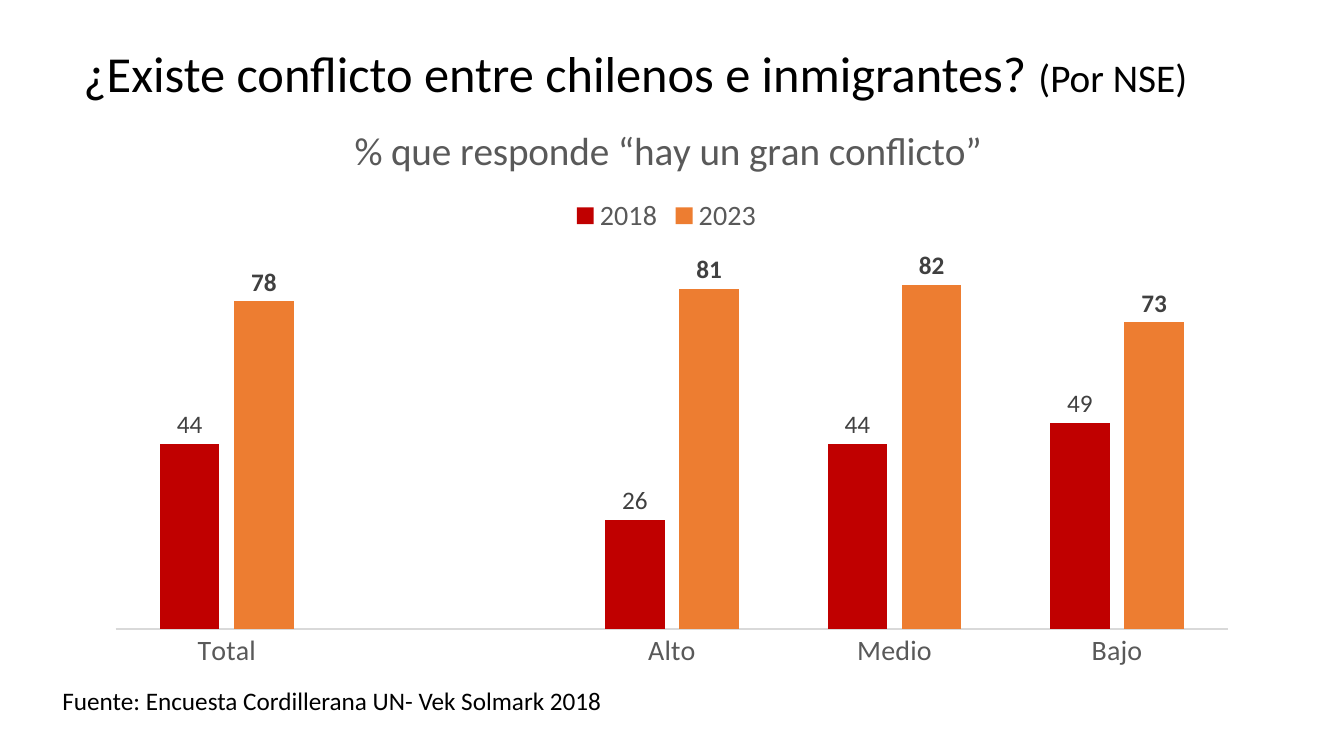
"""Build a slide with a column chart on perceived conflict between Chileans and immigrants."""
from lxml.etree import SubElement
from pptx import Presentation
from pptx.chart.data import CategoryChartData
from pptx.dml.color import RGBColor
from pptx.enum.chart import XL_CHART_TYPE as ChartType
from pptx.enum.chart import XL_LABEL_POSITION as LabelPosition
from pptx.enum.chart import XL_LEGEND_POSITION as LegendPosition
from pptx.enum.chart import XL_TICK_MARK as TickMark
from pptx.enum.text import MSO_ANCHOR as Anchor
from pptx.oxml import parse_xml
from pptx.oxml.ns import nsdecls, qn
from pptx.util import Pt

PX = 9525


def style(font, size, color, bold=False):
    font.name = "Calibri"
    font.size = Pt(size)
    font.bold = bold
    font.color.rgb = RGBColor.from_string(color)


def place(element, index, **fractions):
    for old_layout in element.findall(qn("c:layout")):
        element.remove(old_layout)
    layout = parse_xml(f"<c:layout {nsdecls('c')}><c:manualLayout/></c:layout>")
    manual = layout[0]
    if "w" in fractions:
        SubElement(manual, qn("c:layoutTarget"), val="inner")
    for axis in "xy":
        SubElement(manual, qn(f"c:{axis}Mode"), val="edge")
    for name, value in fractions.items():
        SubElement(manual, qn(f"c:{name}"), val=str(value))
    element.insert(index, layout)


presentation = Presentation()
presentation.slide_width = 1280 * PX
presentation.slide_height = 720 * PX
slide = presentation.slides.add_slide(presentation.slide_layouts[6])

texts = [
    ((70, 35, 1104, 75), Anchor.MIDDLE, 0.9,
     [("¿Existe conflicto entre chilenos e inmigrantes? ", 36), ("(Por NSE)", 28)]),
    ((50, 648, 613, 38), Anchor.TOP, 1.0,
     [("Fuente: Encuesta Cordillerana UN- Vek Solmark 2018", 18)]),
]
for box, anchor, spacing, runs in texts:
    text_box = slide.shapes.add_textbox(*(length * PX for length in box))
    frame = text_box.text_frame
    frame.word_wrap = True
    frame.vertical_anchor = anchor
    paragraph = frame.paragraphs[0]
    paragraph.line_spacing = spacing
    for text, size in runs:
        run = paragraph.add_run()
        run.text = text
        style(run.font, size, "000000")

chart_data = CategoryChartData()
chart_data.categories = ["Total", "", "Alto", "Medio", "Bajo"]
chart_data.add_series("2018", [44, None, 26, 44, 49])
chart_data.add_series("2023", [78, None, 81, 82, 73])
chart_box = [length * PX for length in (88, 95, 1104, 554)]
chart = slide.shapes.add_chart(ChartType.COLUMN_CLUSTERED, *chart_box, chart_data).chart
style(chart.font, 10, "000000")

chart.has_title = True
chart_title = chart.chart_title
chart_title.text_frame.text = "% que responde “hay un gran conflicto”"
style(chart_title.text_frame.paragraphs[0].runs[0].font, 28, "595959")
chart_title.include_in_layout = False

chart.has_legend = True
legend = chart.legend
legend.position = LegendPosition.TOP
legend.include_in_layout = False
style(legend.font, 20, "595959")

category_axis = chart.category_axis
category_axis.major_tick_mark = TickMark.NONE
category_axis.format.line.color.rgb = RGBColor.from_string("D9D9D9")
category_axis.format.line.width = Pt(0.75)
style(category_axis.tick_labels.font, 20, "595959")

value_axis = chart.value_axis
value_axis.visible = False
value_axis.has_major_gridlines = False
value_axis.minimum_scale = 0
value_axis.maximum_scale = 90

plot = chart.plots[0]
plot.gap_width = 150
plot.overlap = -25
plot.vary_by_categories = False
for series, color, bold in zip(plot.series, ("C00000", "ED7D31"), (False, True)):
    series.format.fill.solid()
    series.format.fill.fore_color.rgb = RGBColor.from_string(color)
    labels = series.data_labels
    labels.show_value = True
    labels.position = LabelPosition.OUTSIDE_END
    style(labels.font, 18, "404040", bold)

chart_element = chart.element.find(qn("c:chart"))
place(chart_element.find(qn("c:title")), 1, x=0.22, y=0.03)
place(chart_element.find(qn("c:plotArea")), 0, x=0.02, y=0.26, w=0.96, h=0.65)
place(chart_element.find(qn("c:legend")), 1, x=0.41, y=0.16)

presentation.save("out.pptx")
